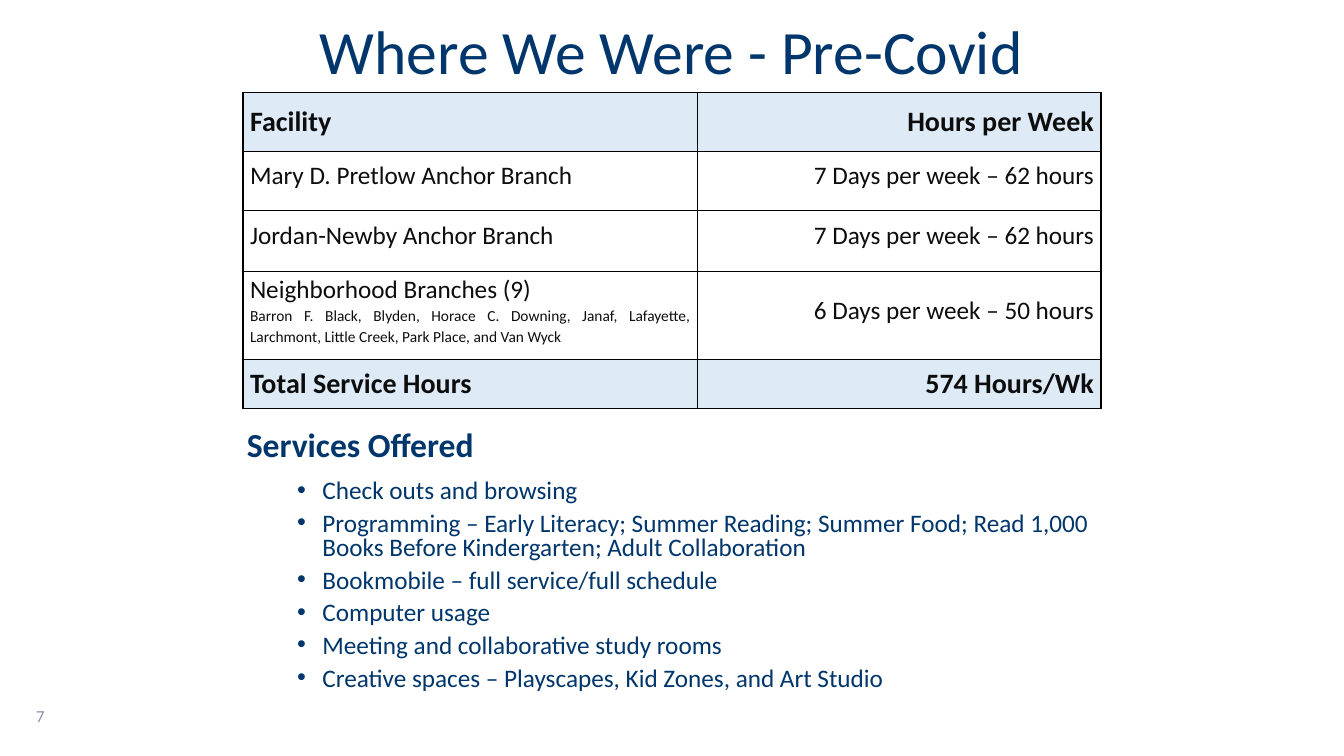
from dataclasses import dataclass

from lxml import etree
from pptx import Presentation
from pptx import util as u
from pptx.dml import color
from pptx.enum import text
from pptx.oxml import ns

NAVY = "00366C"
INK = "0D0D0D"
GREY = "8C91A2"
LEFT, CENTER, RIGHT, JUSTIFY = (
    text.PP_ALIGN.LEFT, text.PP_ALIGN.CENTER, text.PP_ALIGN.RIGHT, text.PP_ALIGN.JUSTIFY)


@dataclass
class Style:
    size: float
    hue: str
    bold: bool = False
    align: text.PP_ALIGN = LEFT
    spacing: object = None
    before: float = 0
    after: float = 0


@dataclass
class FacilityRow:
    facility: str
    hours: str
    height: float
    detail: str = ""
    fill: str = ""


FACILITY_ROWS = [
    FacilityRow("Facility", "Hours per Week", 0.58, fill="DEEAF6"),
    FacilityRow("Mary D. Pretlow Anchor Branch", "7 Days per week – 62 hours", 0.59),
    FacilityRow("Jordan-Newby Anchor Branch", "7 Days per week – 62 hours", 0.6),
    FacilityRow("Neighborhood Branches (9)", "6 Days per week – 50 hours", 0.88,
                "Barron F. Black, Blyden, Horace C. Downing, Janaf, Lafayette, "
                "Larchmont, Little Creek, Park Place, and Van Wyck"),
    FacilityRow("Total Service Hours", "574 Hours/Wk", 0.48, fill="DEEBF7"),
]
COLUMN_WIDTHS = [4.51, 4]

SERVICES = [
    "Check outs and browsing",
    "Programming – Early Literacy; Summer Reading; Summer Food; Read 1,000 "
    "Books Before Kindergarten; Adult Collaboration",
    "Bookmobile – full service/full schedule",
    "Computer usage",
    "Meeting and collaborative study rooms",
    "Creative spaces – Playscapes, Kid Zones, and Art Studio",
]


def rgb(value: str) -> color.RGBColor:
    return color.RGBColor.from_string(value)


def write(paragraph, words: str, style: Style) -> None:
    paragraph.text = words
    paragraph.alignment = style.align
    paragraph.space_before = u.Pt(style.before)
    paragraph.space_after = u.Pt(style.after)
    if style.spacing:
        paragraph.line_spacing = style.spacing
    for run in paragraph.runs:
        run.font.name = "Calibri"
        run.font.size = u.Pt(style.size)
        run.font.bold = style.bold
        run.font.color.rgb = rgb(style.hue)


def add_bullet(paragraph) -> None:
    properties = paragraph._p.get_or_add_pPr()
    properties.set("marL", str(u.Inches(0.75)))
    properties.set("indent", str(u.Inches(-0.25)))
    font = etree.SubElement(properties, ns.qn("a:buFont"))
    font.set("typeface", "Arial")
    etree.SubElement(properties, ns.qn("a:buChar")).set("char", "•")


def add_text_frame(slide, left: float, top: float, width: float, height: float, anchor):
    box = slide.shapes.add_textbox(
        u.Inches(left), u.Inches(top), u.Inches(width), u.Inches(height))
    box.text_frame.word_wrap = True
    box.text_frame.vertical_anchor = anchor
    return box.text_frame


def add_borders(cell) -> None:
    properties = cell._tc.get_or_add_tcPr()
    for side in ("lnL", "lnR", "lnT", "lnB"):
        line = etree.SubElement(properties, ns.qn(f"a:{side}"), w=str(u.Pt(1)))
        fill = etree.SubElement(line, ns.qn("a:solidFill"))
        etree.SubElement(fill, ns.qn("a:srgbClr"), val="000000")


def format_cell(cell, fill: str) -> None:
    cell.margin_left = cell.margin_right = u.Inches(0.07)
    cell.margin_top = cell.margin_bottom = 0
    cell.vertical_anchor = text.MSO_ANCHOR.MIDDLE
    add_borders(cell)
    if fill:
        cell.fill.solid()
        cell.fill.fore_color.rgb = rgb(fill)
    else:
        cell.fill.background()


def add_facility_table(slide) -> None:
    height = sum(row.height for row in FACILITY_ROWS)
    table = slide.shapes.add_table(
        len(FACILITY_ROWS), len(COLUMN_WIDTHS), u.Inches(2.41), u.Inches(0.92),
        u.Inches(sum(COLUMN_WIDTHS)), u.Inches(height)).table
    table.first_row = table.horz_banding = False
    for column, width in zip(table.columns, COLUMN_WIDTHS):
        column.width = u.Inches(width)

    for index, row in enumerate(FACILITY_ROWS):
        table.rows[index].height = u.Inches(row.height)
        shaded = bool(row.fill)
        size = 20 if shaded else 18
        spacing = None if shaded else u.Pt(15)
        facility, hours = table.cell(index, 0), table.cell(index, 1)
        for cell in (facility, hours):
            format_cell(cell, row.fill)
        facility_align = LEFT if shaded else JUSTIFY
        write(facility.text_frame.paragraphs[0], row.facility,
              Style(size, INK, shaded, facility_align, spacing))
        write(hours.text_frame.paragraphs[0], row.hours,
              Style(size, INK, shaded, RIGHT, spacing))
        if row.detail:
            write(facility.text_frame.add_paragraph(), row.detail,
                  Style(11, INK, False, JUSTIFY, spacing))


def add_services(slide) -> None:
    frame = add_text_frame(slide, 2.35, 4.23, 8.77, 2.93, text.MSO_ANCHOR.TOP)
    write(frame.paragraphs[0], "Services Offered",
          Style(24, NAVY, True, spacing=0.8, after=6))
    for service in SERVICES:
        paragraph = frame.add_paragraph()
        write(paragraph, service, Style(18, NAVY, spacing=0.8, before=6))
        add_bullet(paragraph)


def main() -> None:
    presentation = Presentation()
    presentation.slide_width = u.Inches(13.33)
    presentation.slide_height = u.Inches(7.5)
    slide = presentation.slides.add_slide(presentation.slide_layouts[6])

    # Title
    title = add_text_frame(slide, 2.35, 0.07, 8.62, 0.95, text.MSO_ANCHOR.MIDDLE)
    write(title.paragraphs[0], "Where We Were - Pre-Covid",
          Style(44, NAVY, align=CENTER, spacing=0.9))

    # Services and page number
    add_services(slide)
    number = add_text_frame(slide, 0.26, 6.9, 3, 0.4, text.MSO_ANCHOR.MIDDLE)
    write(number.paragraphs[0], "7", Style(12, GREY))

    # Opening hours
    add_facility_table(slide)

    presentation.save("out.pptx")


if __name__ == "__main__":
    main()
